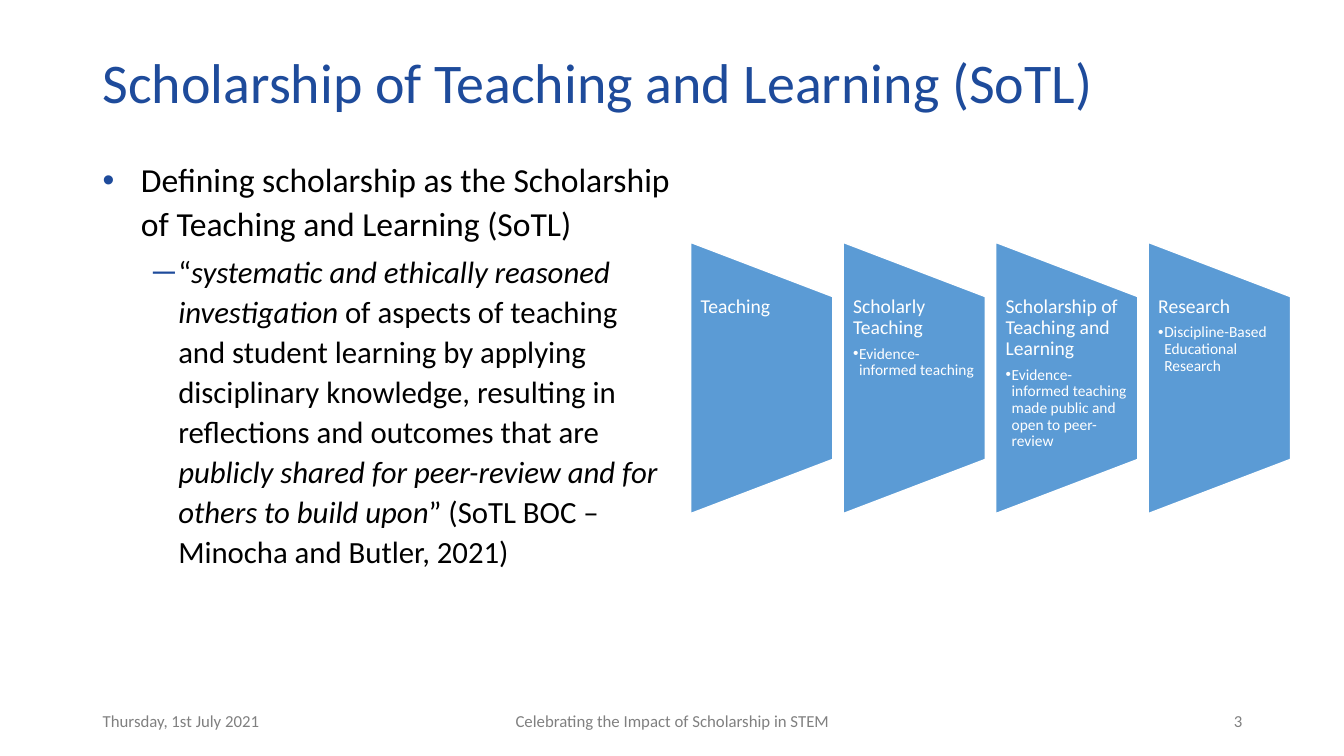
"""Build the slide on the Scholarship of Teaching and Learning."""
from lxml import etree
from pptx import Presentation
from pptx import util as u
from pptx.dml.color import RGBColor
from pptx.enum import shapes, text
from pptx.oxml import ns

COLORS = {"blue": "1E4B9B", "black": "000000", "gray": "808080",
          "stage": "5B9BD5", "white": "FFFFFF"}
LEFT, CENTER, RIGHT = text.PP_ALIGN.LEFT, text.PP_ALIGN.CENTER, text.PP_ALIGN.RIGHT
MIDDLE, TOP = text.MSO_ANCHOR.MIDDLE, text.MSO_ANCHOR.TOP


def add_box(left, top, width, height, anchor=TOP, inset_y=0.05):
    tf = s.shapes.add_textbox(*map(u.Inches, (left, top, width, height))).text_frame
    tf.word_wrap = True
    tf.vertical_anchor = anchor
    tf.margin_top = tf.margin_bottom = u.Inches(inset_y)
    return tf


def write(p, *parts, size, color, align=LEFT, line=1.0, before=0, after=0,
          bullet=None, bullet_color=None, indent=0, hang=0, level=0):
    """Write the parts as runs, every second one in italics."""
    p.level = level
    if bullet:
        pPr = p._p.get_or_add_pPr()
        pPr.set("marL", str(u.Inches(indent)))
        pPr.set("indent", str(-u.Inches(hang)))
        clr = etree.SubElement(pPr, ns.qn("a:buClr"))
        etree.SubElement(clr, ns.qn("a:srgbClr"), val=COLORS[bullet_color])
        etree.SubElement(pPr, ns.qn("a:buFont"), typeface="Arial")
        etree.SubElement(pPr, ns.qn("a:buChar"), char=bullet)
    p.alignment = align
    p.line_spacing = line
    p.space_before, p.space_after = u.Pt(before), u.Pt(after)
    for i, part in enumerate(parts):
        r = p.add_run()
        r.text = part
        r.font.name, r.font.size = "Calibri", u.Pt(size)
        r.font.italic = i % 2 == 1
        r.font.color.rgb = RGBColor.from_string(COLORS[color])


prs = Presentation()
prs.slide_width, prs.slide_height = u.Inches(13.33), u.Inches(7.5)
s = prs.slides.add_slide(prs.slide_layouts[6])

title = add_box(0.92, 0.4, 11.5, 0.9, anchor=MIDDLE)
write(title.paragraphs[0], "Scholarship of Teaching and Learning (SoTL)",
      size=40, color="blue", line=0.9)

body = add_box(0.92, 1.5, 5.83, 5.26)
write(body.paragraphs[0],
      "Defining scholarship as the Scholarship of Teaching and Learning (SoTL)",
      size=24, color="black", line=1.08, bullet="•", bullet_color="blue",
      indent=0.38, hang=0.38)
write(body.add_paragraph(),
      "“", "systematic and ethically reasoned investigation ",
      "of aspects of teaching and student learning by applying disciplinary "
      "knowledge, resulting in reflections and outcomes that are ",
      "publicly shared for peer-review and for others to build upon",
      "” (SoTL BOC – Minocha and Butler, 2021)",
      size=22, color="black", line=1.08, before=5, bullet="─",
      bullet_color="blue", indent=0.75, hang=0.25, level=1)

for label, left, width, align in [
        ("Thursday, 1st July 2021", 0.92, 3, LEFT),
        ("Celebrating the Impact of Scholarship in STEM", 4.42, 4.5, CENTER),
        ("3", 9.42, 3, RIGHT)]:
    footer = add_box(left, 6.95, width, 0.4, anchor=MIDDLE)
    write(footer.paragraphs[0], label, size=12, color="gray", align=align)

stages = [
    ("Teaching", None),
    ("Scholarly Teaching", "Evidence-informed teaching"),
    ("Scholarship of Teaching and Learning",
     "Evidence-informed teaching made public and open to peer-review"),
    ("Research", "Discipline-Based Educational Research"),
]
STAGE_LEFT, STAGE_STEP, STAGE_W, STAGE_H, STAGE_MID = 6.85, 1.513, 1.41, 2.69, 3.75
for i, (heading, detail) in enumerate(stages):
    left = STAGE_LEFT + i * STAGE_STEP
    sp = s.shapes.add_shape(
        shapes.MSO_SHAPE.FLOWCHART_MANUAL_OPERATION,
        u.Inches(left + (STAGE_W - STAGE_H) / 2), u.Inches(STAGE_MID - STAGE_W / 2),
        u.Inches(STAGE_H), u.Inches(STAGE_W))
    sp.rotation = 270
    sp.shadow.inherit = False
    sp.fill.solid()
    sp.fill.fore_color.rgb = RGBColor.from_string(COLORS["stage"])
    sp.line.color.rgb = RGBColor.from_string(COLORS["white"])
    sp.line.width = u.Pt(1)
    tf = add_box(left, 2.94, STAGE_W, 1.61, inset_y=0)
    write(tf.paragraphs[0], heading, size=14, color="white", line=0.9, after=5)
    if detail:
        write(tf.add_paragraph(), detail, size=11, color="white", line=0.9, after=2,
              bullet="•", bullet_color="white", indent=0.06, hang=0.06, level=1)

prs.save("out.pptx")
